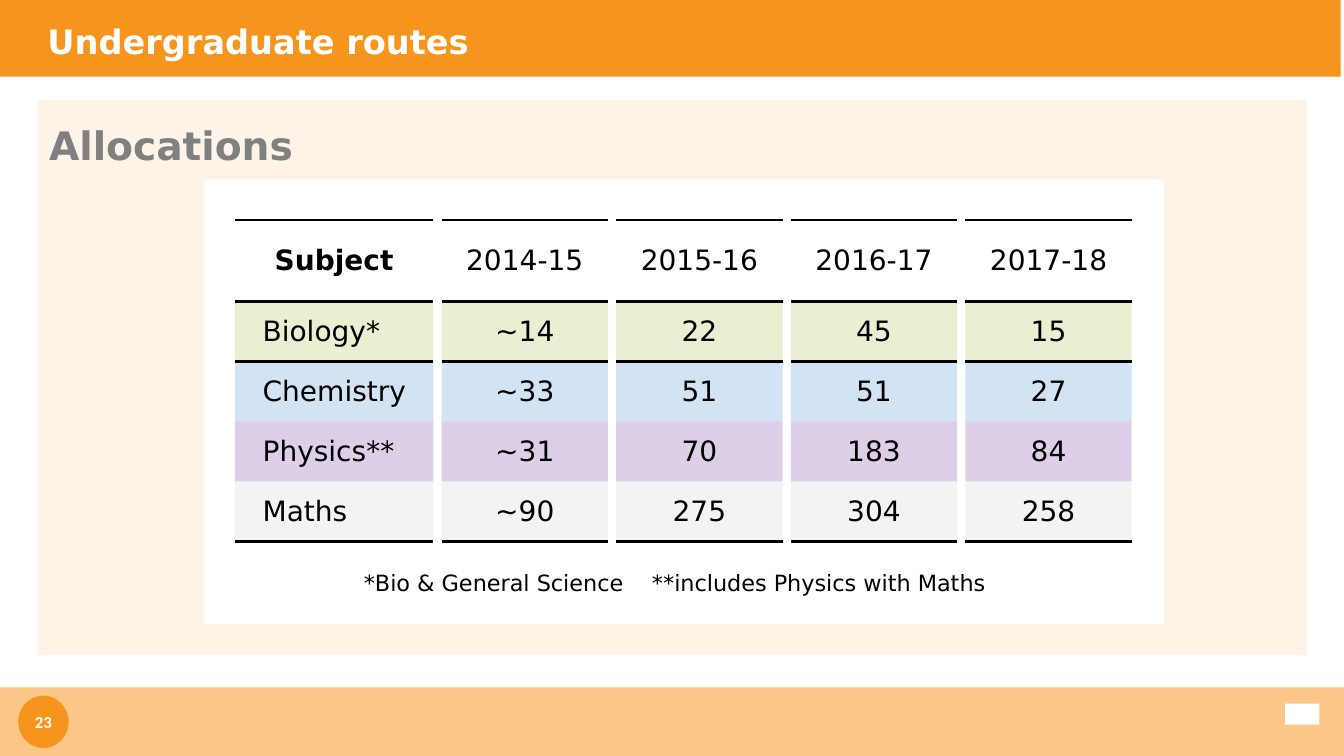
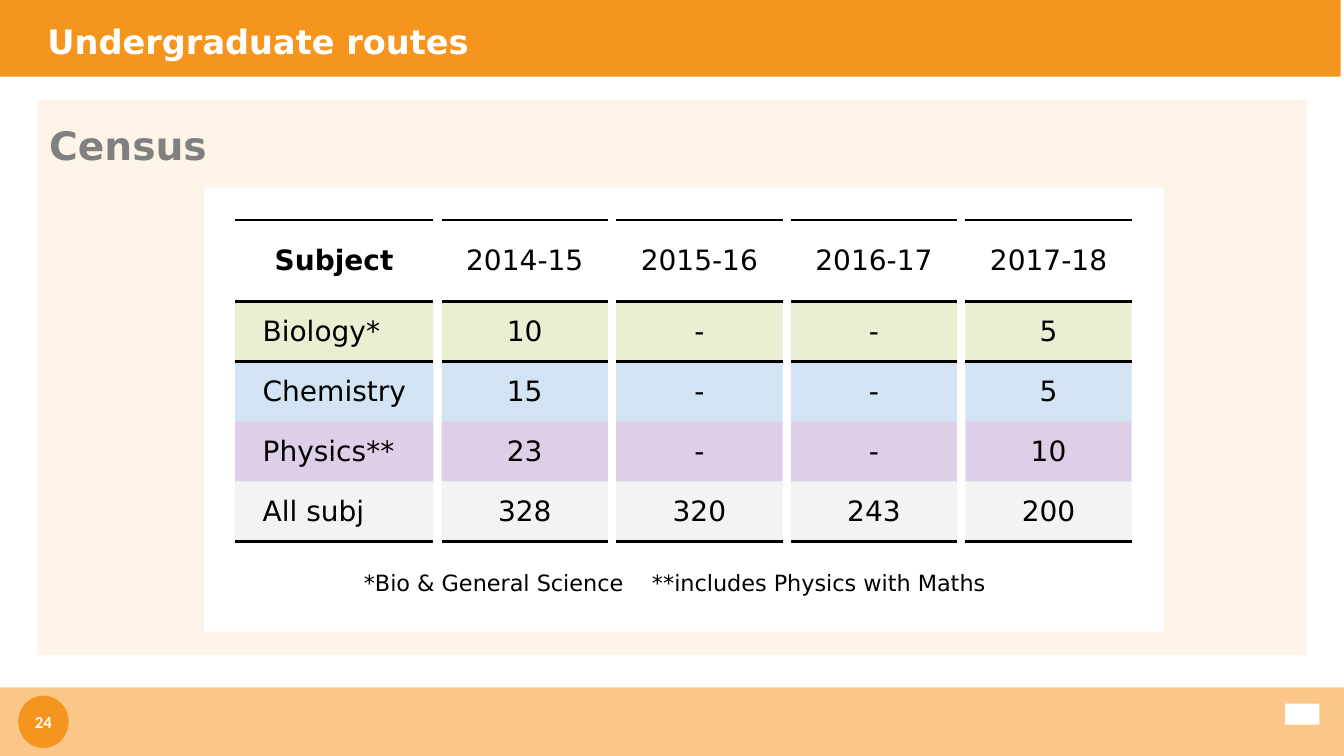
"""Build two slides of undergraduate route figures as column tables."""

from dataclasses import dataclass

from lxml.etree import SubElement
from pptx import Presentation
from pptx.dml.color import RGBColor
from pptx.enum.shapes import MSO_SHAPE, PP_PLACEHOLDER
from pptx.enum.text import MSO_ANCHOR, PP_ALIGN
from pptx.oxml.ns import qn
from pptx.util import Cm, Pt

ORANGE, WHITE, BLACK, GREY = "F5951D", "FFFFFF", "000000", "808080"
BODY_FONT = "DejaVu Sans"
PLAIN_TABLE_STYLE = "{2D5ABB26-0587-4C30-8999-92F81FD0307C}"

TITLE_FONT = {"name": BODY_FONT, "size": Pt(24), "bold": True}
HEADING_FONT = {"name": BODY_FONT, "size": Pt(28), "bold": True}
HEADER_FONT = {"name": BODY_FONT, "size": Pt(20), "bold": True}
CELL_FONT = {"name": BODY_FONT, "size": Pt(20), "bold": False}
NOTE_FONT = {"name": BODY_FONT, "size": Pt(16)}
BADGE_FONT = {"name": "Calibri", "size": Pt(12), "bold": True}
NO_MARGINS = {f"margin_{side}": 0 for side in ("left", "right", "top", "bottom")}
HEADING_MARGINS = dict.fromkeys(NO_MARGINS, Cm(0.3))

TITLE = "Undergraduate routes"
FOOTNOTE = "*Bio & General Science\t**includes Physics with Maths"
HEADERS = ("Subject", "2014-15", "2015-16", "2016-17", "2017-18")
ROW_COLOURS = ("BACC67", "6BA5D9", "9362B6", "D9D9D9")
ROW_OPACITY = 30

TABLE_LEFT, TABLE_TOP, COLUMN_GAP = 5.92, 5.54, 0.21
SUBJECT_WIDTH, YEAR_WIDTH = 5.0, 4.19
HEADER_HEIGHT, ROW_HEIGHT = 2.06, 1.51
THIN_RULE, THICK_RULE = 1.5, 2.25


@dataclass(frozen=True)
class Box:
    """A place on the slide in centimetres."""

    left: float
    top: float
    width: float
    height: float

    def lengths(self) -> tuple:
        """Return the place as slide lengths."""
        return tuple(Cm(value) for value in (self.left, self.top, self.width, self.height))


@dataclass(frozen=True)
class Band:
    """A filled rectangle shared by every slide."""

    box: Box
    colour: str
    opacity: int = 100


@dataclass(frozen=True)
class RouteSlide:
    """The content that differs between slides."""

    number: int
    heading: str
    card_top: float
    rows: tuple


BANDS = (
    Band(Box(0.94, 2.51, 32, 14), ORANGE, 10),
    Band(Box(-0.08, 0, 33.87, 1.93), ORANGE),
    Band(Box(0, 17.32, 33.87, 1.73), "F7941D", 52),
    Band(Box(32.39, 17.73, 0.86, 0.53), WHITE),
)

ROUTE_SLIDES = (
    RouteSlide(23, "Allocations", 4.52, (
        ("Biology*", "~14", "22", "45", "15"),
        ("Chemistry", "~33", "51", "51", "27"),
        ("Physics**", "~31", "70", "183", "84"),
        ("Maths", "~90", "275", "304", "258"),
    )),
    RouteSlide(24, "Census", 4.72, (
        ("Biology*", "10", "-", "-", "5"),
        ("Chemistry", "15", "-", "-", "5"),
        ("Physics**", "23", "-", "-", "10"),
        ("All subj", "328", "320", "243", "200"),
    )),
)


def apply_format(target, values: dict) -> None:
    """Set each named attribute on the target."""
    for name, value in values.items():
        setattr(target, name, value)


def colour_of(hex_colour: str) -> RGBColor:
    """Turn a hex string into a colour."""
    return RGBColor.from_string(hex_colour)


def paint(fill, properties, hex_colour: str, opacity: int = 100) -> None:
    """Fill an object solidly, with transparency when asked for."""
    fill.solid()
    fill.fore_color.rgb = colour_of(hex_colour)
    if opacity < 100:
        colour = properties.find(f"{qn('a:solidFill')}/{qn('a:srgbClr')}")
        SubElement(colour, qn("a:alpha"), val=str(opacity * 1000))


def write(text_frame, text: str, font: dict, hex_colour: str):
    """Write one formatted paragraph and return it."""
    text_frame.text = text
    paragraph = text_frame.paragraphs[0]
    run_font = paragraph.runs[0].font
    apply_format(run_font, font)
    run_font.color.rgb = colour_of(hex_colour)
    return paragraph


def add_filled_shape(slide, kind, box: Box, hex_colour: str, opacity: int = 100):
    """Add a flat shape without an outline."""
    shape = slide.shapes.add_shape(kind, *box.lengths())
    shape.shadow.inherit = False
    shape.line.fill.background()
    paint(shape.fill, shape.element.spPr, hex_colour, opacity)
    return shape


def add_text(slide, box: Box, text: str, font: dict, hex_colour: str):
    """Add a wrapping text box and return its frame."""
    text_frame = slide.shapes.add_textbox(*box.lengths()).text_frame
    text_frame.word_wrap = True
    write(text_frame, text, font, hex_colour)
    return text_frame


def move_bands_to_layout(slide, layout) -> None:
    """Draw the shared bands and keep them on the layout."""
    for placeholder in list(layout.placeholders):
        if placeholder.placeholder_format.type != PP_PLACEHOLDER.TITLE:
            layout.shapes.element.remove(placeholder.element)
    shapes = [
        add_filled_shape(slide, MSO_SHAPE.RECTANGLE, band.box, band.colour, band.opacity)
        for band in BANDS
    ]
    for shape in shapes:
        layout.shapes.element.append(shape.element)


def add_rules(properties, rules: dict) -> None:
    """Give a table cell its horizontal rules."""
    for tag, width in rules.items():
        line = SubElement(properties, qn(tag), w=str(Pt(width)))
        solid = SubElement(line, qn("a:solidFill"))
        SubElement(solid, qn("a:srgbClr"), val=BLACK)


def add_column(slide, box: Box, texts: tuple, is_subject: bool) -> None:
    """Add one column of figures as its own table."""
    frame = slide.shapes.add_table(len(texts), 1, *box.lengths())
    frame.element.find(f".//{qn('a:tableStyleId')}").text = PLAIN_TABLE_STYLE
    table = frame.table
    apply_format(table, {"first_row": False, "horz_banding": False})
    rules = {
        0: {"a:lnT": THIN_RULE, "a:lnB": THICK_RULE},
        1: {"a:lnT": THICK_RULE},
        len(texts) - 1: {"a:lnB": THICK_RULE},
    }
    for index, text in enumerate(texts):
        is_header = index == 0
        table.rows[index].height = Cm(HEADER_HEIGHT if is_header else ROW_HEIGHT)
        cell = table.cell(index, 0)
        cell.vertical_anchor = MSO_ANCHOR.MIDDLE
        font = HEADER_FONT if is_header and is_subject else CELL_FONT
        paragraph = write(cell.text_frame, text, font, BLACK)
        if is_subject and not is_header:
            cell.margin_left = Cm(0.7)
        else:
            paragraph.alignment = PP_ALIGN.CENTER
        properties = cell._tc.get_or_add_tcPr()
        add_rules(properties, rules.get(index, {}))
        if is_header:
            paint(cell.fill, properties, WHITE)
        else:
            paint(cell.fill, properties, ROW_COLOURS[index - 1], ROW_OPACITY)


def add_columns(slide, rows: tuple) -> None:
    """Set the subject and year columns side by side."""
    left = TABLE_LEFT
    height = HEADER_HEIGHT + len(rows) * ROW_HEIGHT
    for index, texts in enumerate(zip(HEADERS, *rows)):
        width = YEAR_WIDTH if index else SUBJECT_WIDTH
        add_column(slide, Box(left, TABLE_TOP, width, height), texts, index == 0)
        left += width + COLUMN_GAP


def add_footnote(slide) -> None:
    """Add the two notes, parted by a tab stop."""
    text_frame = add_text(slide, Box(8.92, 14.22, 16.64, 0.94), FOOTNOTE, NOTE_FONT, BLACK)
    properties = text_frame.paragraphs[0]._p.get_or_add_pPr()
    tabs = SubElement(properties, qn("a:tabLst"))
    SubElement(tabs, qn("a:tab"), pos=str(Cm(7.26)), algn="l")


def format_title(slide) -> None:
    """Place and write the title."""
    title = slide.shapes.title
    places = zip(("left", "top", "width", "height"), Box(0.94, 0.33, 31.47, 1.4).lengths())
    apply_format(title, dict(places))
    title.text_frame.vertical_anchor = MSO_ANCHOR.MIDDLE
    write(title.text_frame, TITLE, TITLE_FONT, WHITE).alignment = PP_ALIGN.LEFT


def add_badge(slide, number: int) -> None:
    """Add the round slide number."""
    badge = add_filled_shape(slide, MSO_SHAPE.OVAL, Box(0.46, 17.53, 1.27, 1.32), ORANGE)
    apply_format(badge.text_frame, {**NO_MARGINS, "vertical_anchor": MSO_ANCHOR.MIDDLE})
    write(badge.text_frame, str(number), BADGE_FONT, WHITE).alignment = PP_ALIGN.CENTER


def fill_slide(slide, content: RouteSlide) -> None:
    """Draw everything that belongs to one slide."""
    format_title(slide)
    add_badge(slide, content.number)
    heading = add_text(slide, Box(0.94, 2.59, 31.65, 13.9), content.heading, HEADING_FONT, GREY)
    apply_format(heading, HEADING_MARGINS)
    apply_format(heading.paragraphs[0], {"line_spacing": 1.14, "space_after": Pt(6)})
    add_filled_shape(slide, MSO_SHAPE.RECTANGLE, Box(5.13, content.card_top, 24.2, 11.2), WHITE)
    add_columns(slide, content.rows)
    add_footnote(slide)


def main() -> None:
    """Build and save the presentation."""
    presentation = Presentation()
    apply_format(presentation, {"slide_width": Cm(33.87), "slide_height": Cm(19.05)})
    layout = presentation.slide_layouts.get_by_name("Title Only")
    slides = [presentation.slides.add_slide(layout) for _ in ROUTE_SLIDES]
    move_bands_to_layout(slides[0], layout)
    for slide, content in zip(slides, ROUTE_SLIDES):
        fill_slide(slide, content)
    presentation.save("out.pptx")


if __name__ == "__main__":
    main()
